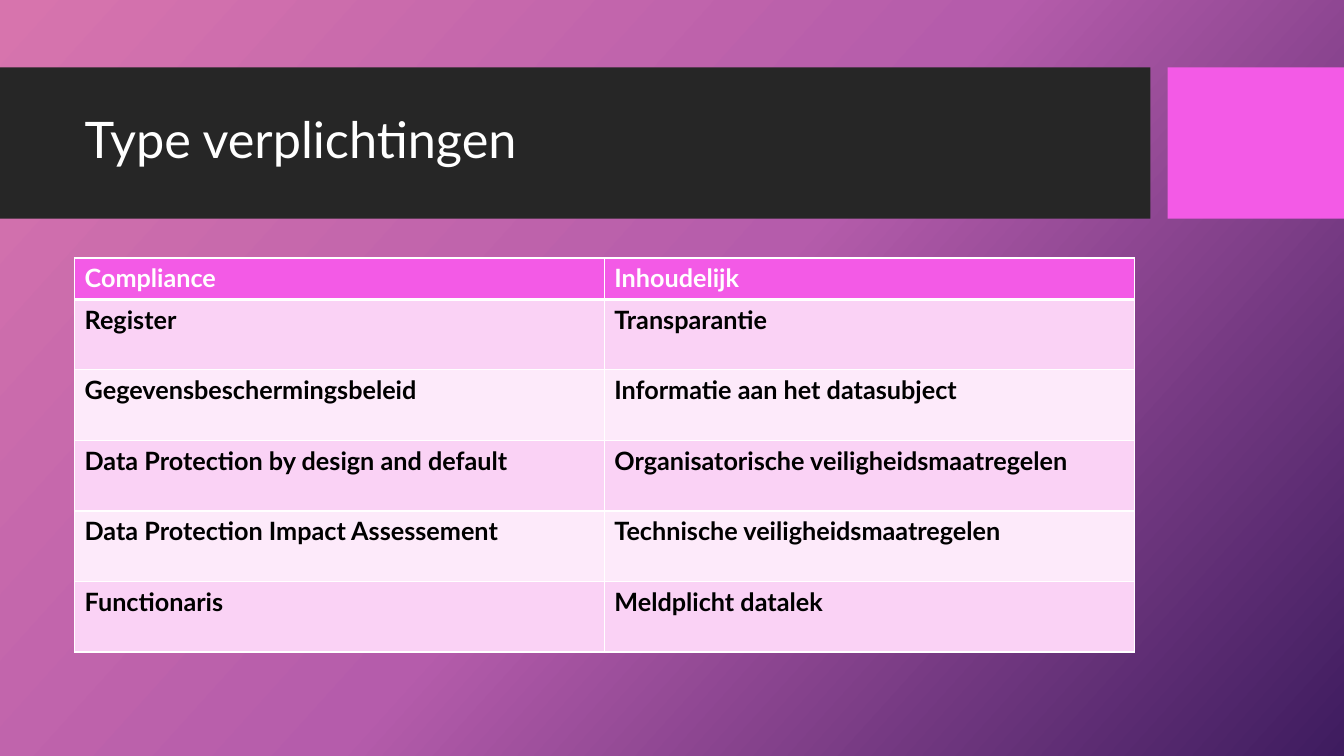
from copy import deepcopy
from dataclasses import dataclass

from lxml.etree import SubElement
from pptx import Presentation
from pptx.dml.color import RGBColor
from pptx.enum.shapes import MSO_SHAPE
from pptx.enum.text import MSO_ANCHOR, MSO_AUTO_SIZE, PP_ALIGN
from pptx.oxml.ns import qn
from pptx.util import Emu, Inches, Pt

WIDE, HIGH = Inches(13.33), Inches(7.5)
FONT = "Lato"
WHITE = RGBColor(0xFF, 0xFF, 0xFF)
BLACK = RGBColor(0, 0, 0)
DARK = RGBColor(0x26, 0x26, 0x26)
PINK = RGBColor(0xF3, 0x5A, 0xE6)
ROSE = RGBColor(0xFA, 0xD2, 0xF5)
BLUSH = RGBColor(0xFD, 0xEA, 0xFA)
FADE = [
    (0, RGBColor(0xD7, 0x74, 0xAD)),
    (0.5, RGBColor(0xB5, 0x5C, 0xAB)),
    (1, RGBColor(0x3E, 0x1C, 0x5F)),
]
DUTIES = [
    ("Compliance", "Inhoudelijk"),
    ("Register", "Transparantie"),
    ("Gegevensbeschermingsbeleid", "Informatie aan het datasubject"),
    ("Data Protection by design and default",
     "Organisatorische veiligheidsmaatregelen"),
    ("Data Protection Impact Assessement", "Technische veiligheidsmaatregelen"),
    ("Functionaris", "Meldplicht datalek"),
]


@dataclass
class Box:
    """A place on the slide, in percent of its width and height."""
    left: float
    top: float
    width: float
    height: float

    def place(self) -> tuple[Emu, Emu, Emu, Emu]:
        return (across(self.left), down(self.top),
                across(self.width), down(self.height))


@dataclass
class Band:
    box: Box
    color: RGBColor


BANDS = [
    Band(Box(0, 8.93, 85.6, 20), DARK),
    Band(Box(86.87, 8.93, 13.13, 20), PINK),
]
TITLE = Box(5.55, 10.93, 78.84, 15.73)
HEAD, BODY = 5.47, 9.33
GRID = Box(5.55, 34.13, 78.84, HEAD + BODY * (len(DUTIES) - 1))


def across(share: float) -> Emu:
    return Emu(round(WIDE * share / 100))


def down(share: float) -> Emu:
    return Emu(round(HIGH * share / 100))


def paint(slide) -> None:
    fill = slide.background.fill
    fill.gradient()
    fill.gradient_angle = 360 - 42
    stops = next(slide.element.iter(qn("a:gsLst")))
    stops.append(deepcopy(stops[-1]))
    for stop, (spot, color) in zip(fill.gradient_stops, FADE):
        stop.position = spot
        stop.color.rgb = color


def add_band(slide, band: Band) -> None:
    shape = slide.shapes.add_shape(MSO_SHAPE.RECTANGLE, *band.box.place())
    shape.shadow.inherit = False
    shape.fill.solid()
    shape.fill.fore_color.rgb = band.color
    shape.line.fill.background()


def style(para, size: int, color: RGBColor, bold: bool) -> None:
    para.font.name = FONT
    para.font.size = Pt(size)
    para.font.bold = bold
    para.font.color.rgb = color


def add_title(slide, text: str) -> None:
    title = slide.shapes.title
    title.left, title.top, title.width, title.height = TITLE.place()
    frame = title.text_frame
    frame.text = text
    frame.word_wrap = True
    frame.auto_size = MSO_AUTO_SIZE.NONE
    frame.vertical_anchor = MSO_ANCHOR.MIDDLE
    para = frame.paragraphs[0]
    para.alignment = PP_ALIGN.LEFT
    para.line_spacing = 0.9
    style(para, 36, WHITE, False)
    # Bring the title in front of the bands
    title.element.getparent().append(title.element)


def edge(cell, widths: dict[str, int]) -> None:
    props = cell._tc.get_or_add_tcPr()
    for spot, (side, width) in enumerate(widths.items()):
        line = SubElement(props, qn(f"a:{side}"), w=str(Pt(width)))
        fill = SubElement(line, qn("a:solidFill"))
        SubElement(fill, qn("a:srgbClr"), val=str(WHITE))
        props.insert(spot, line)


def add_grid(slide) -> None:
    table = slide.shapes.add_table(len(DUTIES), 2, *GRID.place()).table
    for col in table.columns:
        col.width = across(GRID.width / 2)
    for i, duty in enumerate(DUTIES):
        head = i == 0
        table.rows[i].height = down(HEAD if head else BODY)
        for j, text in enumerate(duty):
            cell = table.cell(i, j)
            cell.text = text
            cell.fill.solid()
            cell.fill.fore_color.rgb = PINK if head else ROSE if i % 2 else BLUSH
            style(cell.text_frame.paragraphs[0], 18,
                  WHITE if head else BLACK, True)
            edge(cell, {"lnL": 1, "lnR": 1, "lnT": 3 if i == 1 else 1,
                        "lnB": 3 if head else 1})


def main() -> None:
    deck = Presentation()
    deck.slide_width, deck.slide_height = WIDE, HIGH
    slide = deck.slides.add_slide(deck.slide_layouts[5])

    # Backdrop and header bands
    paint(slide)
    for band in BANDS:
        add_band(slide, band)

    # Title and table of duties
    add_title(slide, "Type verplichtingen")
    add_grid(slide)
    deck.save("out.pptx")


if __name__ == "__main__":
    main()
